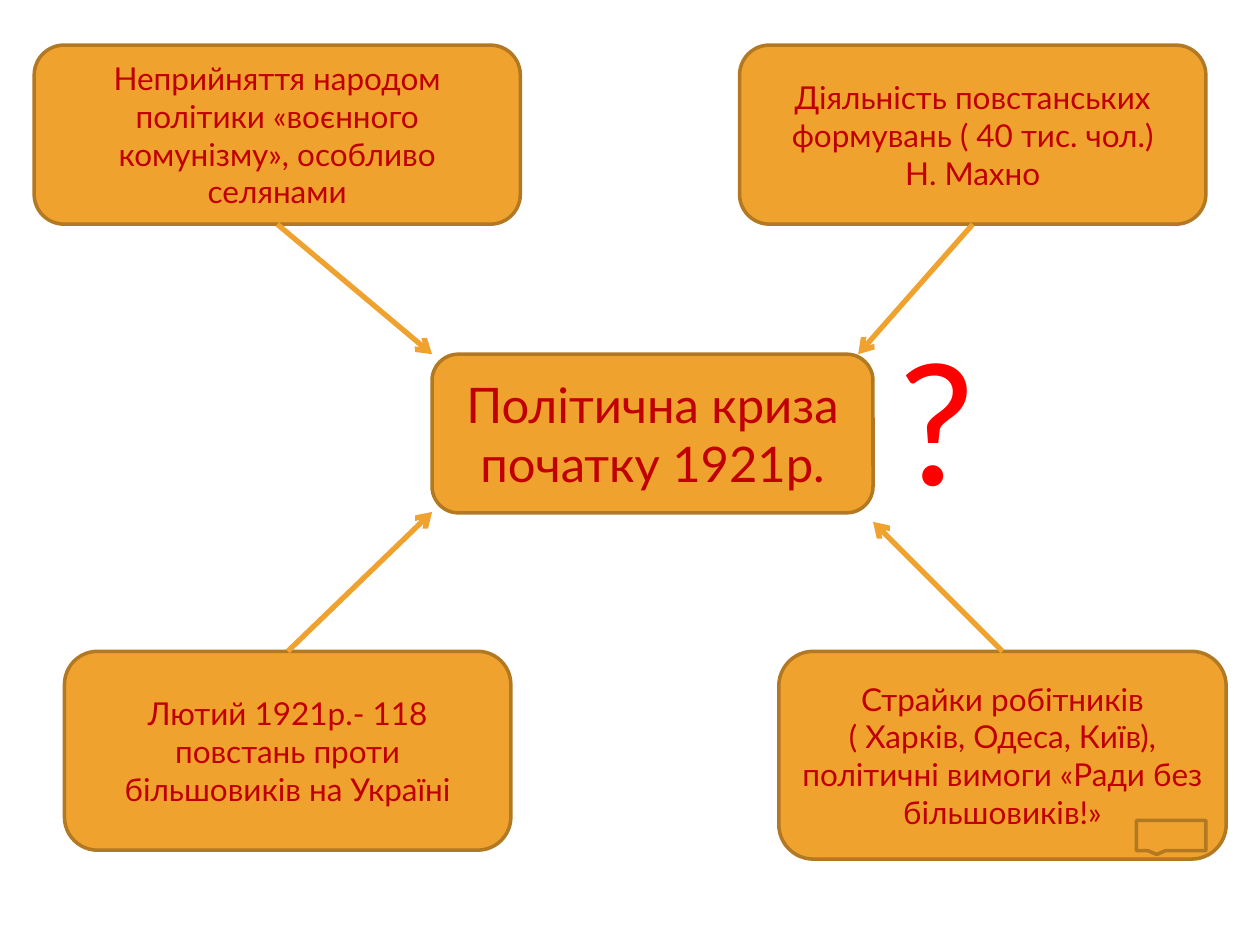
from lxml.etree import SubElement
from pptx import Presentation
from pptx.dml.color import RGBColor
from pptx.enum.shapes import MSO_CONNECTOR, MSO_SHAPE
from pptx.enum.text import MSO_ANCHOR, MSO_AUTO_SIZE, PP_ALIGN
from pptx.oxml.ns import qn
from pptx.util import Cm, Pt

AMBER = RGBColor(0xF0, 0xA2, 0x2E)
BROWN = RGBColor(0xB2, 0x78, 0x22)
DARK_RED = RGBColor(0xC0, 0x00, 0x00)
RED = RGBColor(0xFF, 0x00, 0x00)
FONT = "Lato"
TOP, BOTTOM = 0, 2

CAUSES = [
    ((0.69, 0.91, 9.8, 3.61), BOTTOM, (8.71, 7.14),
     ["Неприйняття народом політики «воєнного комунізму», особливо селянами"]),
    ((14.91, 0.91, 9.4, 3.61), BOTTOM, (17.3, 7.14),
     ["Діяльність повстанських формувань ( 40 тис. чол.)", "Н. Махно"]),
    ((1.3, 13.13, 9, 4.01), TOP, (8.71, 10.32),
     ["Лютий 1921р.- 118 повстань проти більшовиків на Україні"]),
    ((15.7, 13.13, 9.02, 4.19), TOP, (17.6, 10.52),
     ["Страйки робітників ( Харків, Одеса, Київ), політичні вимоги "
      "«Ради без більшовиків!»"]),
]


def write(paragraph, text, size, color):
    run = paragraph.add_run()
    run.text = text
    run.font.name = FONT
    run.font.size = Pt(size)
    run.font.color.rgb = color


def add_amber_shape(slide, kind, place):
    shape = slide.shapes.add_shape(kind, *map(Cm, place))
    shape.shadow.inherit = False
    shape.fill.solid()
    shape.fill.fore_color.rgb = AMBER
    shape.line.color.rgb = BROWN
    shape.line.width = Pt(2)
    return shape


def add_box(slide, place, lines, size):
    box = add_amber_shape(slide, MSO_SHAPE.ROUNDED_RECTANGLE, place)
    frame = box.text_frame
    frame.word_wrap = True
    frame.vertical_anchor = MSO_ANCHOR.MIDDLE
    for index, line in enumerate(lines):
        paragraph = frame.add_paragraph() if index else frame.paragraphs[0]
        paragraph.alignment = PP_ALIGN.CENTER
        write(paragraph, line, size, DARK_RED)
    return box


def add_arrow(slide, cause, side, target):
    end = [Cm(value) for value in target]
    arrow = slide.shapes.add_connector(MSO_CONNECTOR.STRAIGHT, *end, *end)
    arrow.begin_connect(cause, side)
    arrow.line.color.rgb = AMBER
    arrow.line.width = Pt(3)
    SubElement(arrow.line._get_or_add_ln(), qn("a:tailEnd"), type="arrow")
    SubElement(arrow._element.spPr, qn("a:effectLst"))


def add_question_mark(slide):
    question = slide.shapes.add_textbox(Cm(17.88), Cm(6.27), Cm(2.79), Cm(4.37))
    frame = question.text_frame
    frame.word_wrap = True
    frame.auto_size = MSO_AUTO_SIZE.SHAPE_TO_FIT_TEXT
    write(frame.paragraphs[0], "?", 96, RED)


def main():
    deck = Presentation()
    deck.slide_width, deck.slide_height = Cm(25.4), Cm(19.05)
    slide = deck.slides.add_slide(deck.slide_layouts[6])

    add_box(slide, (8.71, 7.14, 8.89, 3.2), ["Політична криза початку 1921р."], 28)
    causes = [add_box(slide, place, lines, 18) for place, _, _, lines in CAUSES]
    for cause, (_, side, target, _) in zip(causes, CAUSES):
        add_arrow(slide, cause, side, target)
    add_amber_shape(slide, MSO_SHAPE.RECTANGULAR_CALLOUT, (22.91, 16.54, 1.4, 0.61))
    add_question_mark(slide)

    deck.save("out.pptx")


if __name__ == "__main__":
    main()
